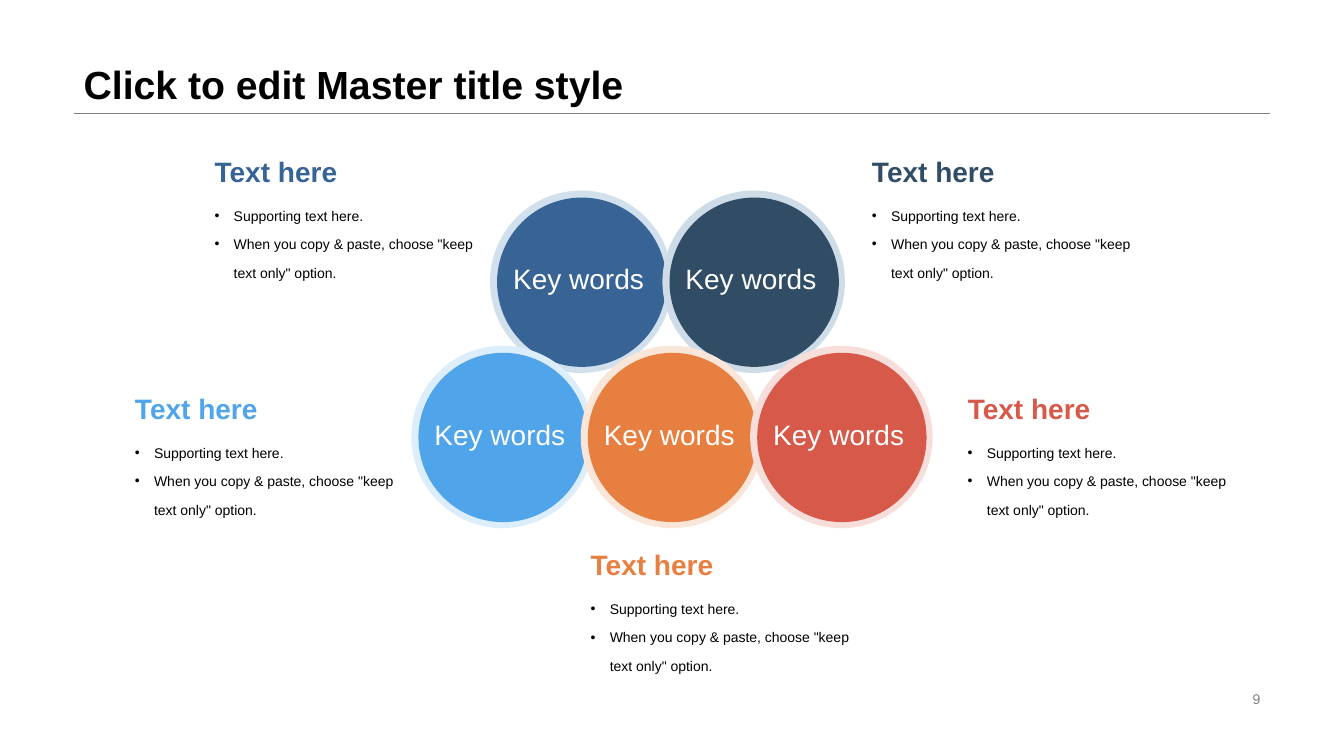
import pptx
import pptx.dml.color
import pptx.enum.shapes
import pptx.enum.text
import pptx.oxml.ns
import pptx.util
from lxml import etree

PX = 9144  # 100 px to the inch
FONT = "Arial"
COLOURS = {
    "white": "FFFFFF", "black": "000000", "grey": "808080",
    "blue": "376495", "blue ring": "D2E0EE",
    "navy": "314D66", "navy ring": "CEDCE8",
    "sky": "50A4E9", "sky ring": "DCEDFB",
    "orange": "E67F3F", "orange ring": "FAE5D9",
    "red": "D65949", "red ring": "F7DEDB",
}
RING, DISC = 181, 168
SUPPORT = ["Supporting text here.",
           'When you copy & paste, choose "keep text only" option.']

SHAPES = pptx.enum.shapes.MSO_SHAPE
ANCHOR = pptx.enum.text.MSO_ANCHOR
ALIGN = pptx.enum.text.PP_ALIGN


def px(*lengths):
    return [pptx.util.Emu(length * PX) for length in lengths]


def rgb(name):
    return pptx.dml.color.RGBColor.from_string(COLOURS[name])


class SlideBuilder:
    def __init__(self, slide):
        self.slide = slide

    def set_text(self, shape, lines, size, colour, bold=False, wrap=True,
                 align=ALIGN.LEFT, anchor=ANCHOR.TOP, spacing=None, bullets=False):
        frame = shape.text_frame
        frame.text = "\n".join(lines)
        frame.word_wrap = wrap
        frame.auto_size = pptx.enum.text.MSO_AUTO_SIZE.NONE
        frame.vertical_anchor = anchor
        for paragraph in frame.paragraphs:
            paragraph.alignment = align
            if spacing:
                paragraph.line_spacing = spacing
            if bullets:
                self.bullet(paragraph)
            for run in paragraph.runs:
                run.font.name = FONT
                run.font.size = pptx.util.Pt(size)
                run.font.bold = bold
                run.font.color.rgb = rgb(colour)

    def bullet(self, paragraph):
        properties = paragraph._p.get_or_add_pPr()
        properties.set("marL", str(19 * PX))
        properties.set("indent", str(-19 * PX))
        font = etree.SubElement(properties, pptx.oxml.ns.qn("a:buFont"))
        font.set("typeface", FONT)
        mark = etree.SubElement(properties, pptx.oxml.ns.qn("a:buChar"))
        mark.set("char", "•")

    def title(self, box, text):
        title = self.slide.shapes.title
        title.left, title.top, title.width, title.height = px(*box)
        self.set_text(title, [text], 28, "black", bold=True,
                      anchor=ANCHOR.BOTTOM, spacing=0.9)

    def rule(self, left, right, top):
        line = self.slide.shapes.add_connector(
            pptx.enum.shapes.MSO_CONNECTOR.STRAIGHT, *px(left, top, right, top))
        line.line.color.rgb = rgb("grey")
        line.line.width = pptx.util.Pt(0.25)
        etree.SubElement(line._element.spPr, pptx.oxml.ns.qn("a:effectLst"))

    def text(self, box, lines, size, colour, **style):
        shape = self.slide.shapes.add_textbox(*px(*box))
        self.set_text(shape, lines, size, colour, **style)

    def shape(self, kind, box, fill):
        shape = self.slide.shapes.add_shape(kind, *px(*box))
        shape.shadow.inherit = False
        shape.fill.solid()
        shape.fill.fore_color.rgb = rgb(fill)
        shape.line.fill.background()
        return shape

    def key_circle(self, left, top, colour):
        inset = (RING - DISC + 1) // 2
        self.shape(SHAPES.OVAL, (left, top, RING, RING), colour + " ring")
        self.shape(SHAPES.OVAL, (left + inset, top + inset, DISC, DISC), colour)
        self.text((left + 13, top + 66, 155, 50), ["Key words"], 20, "white",
                  wrap=False)

    def note(self, left, top, colour):
        self.text((left, top + 41, 276, 94), SUPPORT, 10, "black",
                  spacing=1.7, bullets=True)
        heading = self.shape(SHAPES.RECTANGLE, (left, top, 149, 41), "white")
        self.set_text(heading, ["Text here"], 20, colour, bold=True, wrap=False)


def main():
    presentation = pptx.Presentation()
    presentation.slide_width, presentation.slide_height = px(1333, 750)
    slide = presentation.slides.add_slide(presentation.slide_layouts[5])
    builder = SlideBuilder(slide)

    # Title, rule and page number
    builder.rule(73, 1260, 112)
    builder.title((73, 0, 1187, 112), "Click to edit Master title style")
    builder.text((942, 682, 318, 23), ["9"], 10, "grey",
                 align=ALIGN.RIGHT, anchor=ANCHOR.MIDDLE)

    # Two rows of overlapping circles: left, top, pitch, colours
    rows = [(486, 189, 171, ["blue", "navy"]),
            (408, 343, 168, ["sky", "orange", "red"])]
    for left, top, pitch, colours in rows:
        for column, colour in enumerate(colours):
            builder.key_circle(left + column * pitch, top, colour)

    # Notes around the circles
    notes = [(203, 148, "blue"), (855, 148, "navy"), (124, 383, "sky"),
             (576, 538, "orange"), (950, 383, "red")]
    for left, top, colour in notes:
        builder.note(left, top, colour)

    presentation.save("out.pptx")


if __name__ == "__main__":
    main()
